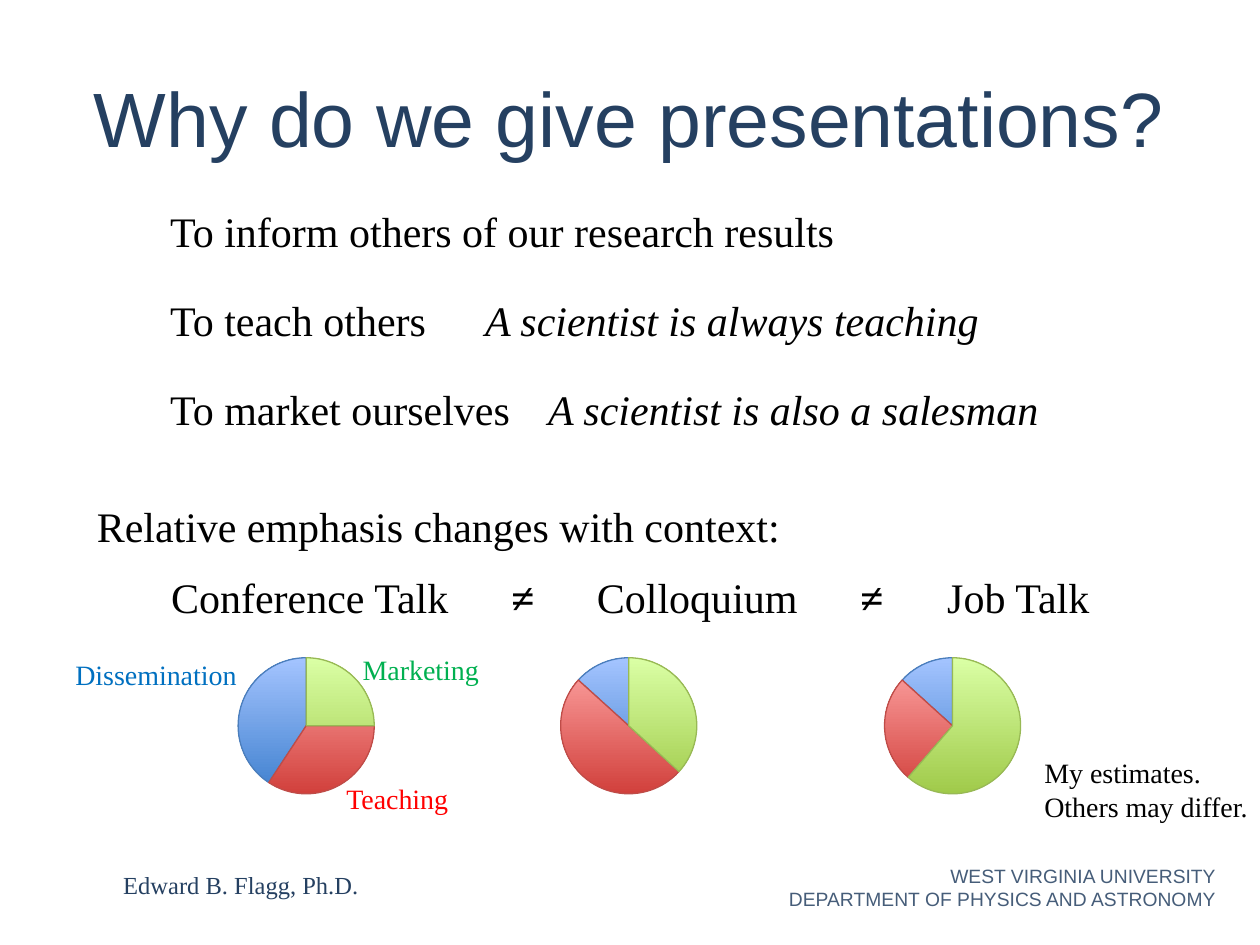
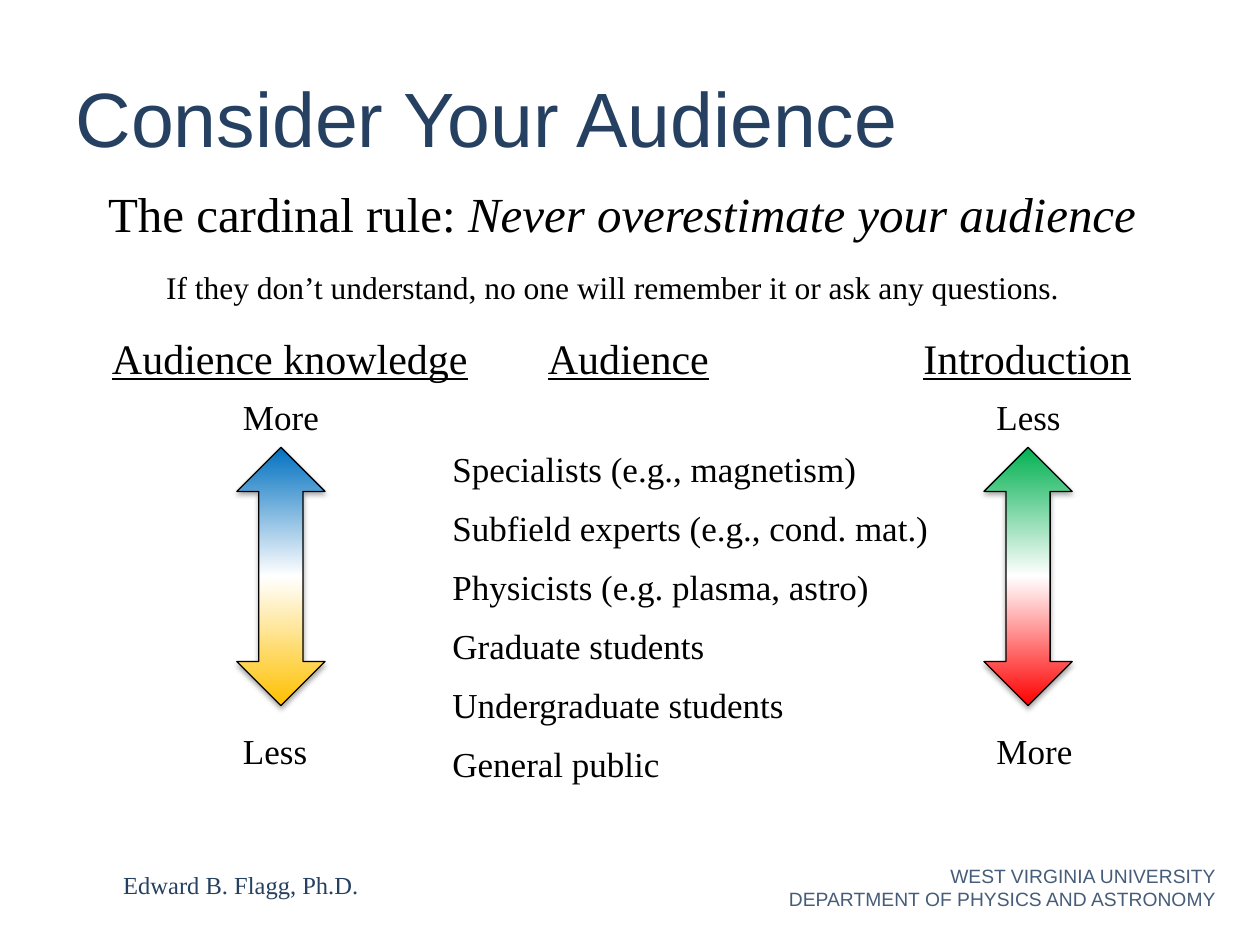
from dataclasses import dataclass

from lxml.etree import SubElement
from pptx import Presentation
from pptx.dml.color import RGBColor
from pptx.enum.shapes import MSO_SHAPE
from pptx.enum.text import MSO_ANCHOR, MSO_AUTO_SIZE, PP_ALIGN
from pptx.oxml.ns import qn
from pptx.util import Inches, Pt

SERIF, SANS = "Times New Roman", "Arial"
NAVY, FOOTER, BLACK = "254061", "465D79", "000000"
PIE_TOP, PIE_SIZE = 5.22, 1.08


@dataclass(frozen=True)
class Run:
    text: str
    italic: bool = False
    bold: bool = False
    underline: bool = False


@dataclass(frozen=True)
class Style:
    size: float
    color: str = BLACK
    font: str = SERIF
    align: PP_ALIGN = PP_ALIGN.LEFT
    gap: float = 0
    tabs: tuple[float, ...] = ()


@dataclass(frozen=True)
class Box:
    left: float
    top: float
    width: float
    height: float

    def lengths(self) -> list:
        return [Inches(v) for v in (self.left, self.top, self.width, self.height)]


@dataclass(frozen=True)
class Slice:
    dark: str
    light: str
    line: str


@dataclass(frozen=True)
class Pie:
    left: float
    marketing_end: float
    teaching_end: float


@dataclass(frozen=True)
class Scale:
    heading: str
    heading_left: float
    heading_width: float
    label_left: float
    arrow_left: float
    top_label: str
    bottom_label: str
    top_color: str
    bottom_color: str


MARKETING = Slice("A0CA4A", "DAFFA5", "98B955")
TEACHING = Slice("D1403C", "FFA6A5", "BF4C48")
DISSEMINATION = Slice("3F80CE", "A4C4FF", "4B7EBC")

PIES = [Pie(1.89, 0, 123.4), Pie(4.45, 42.3, 222.2), Pie(7.02, 130.7, 222.2)]

PIE_LABELS = [
    ("Dissemination", Box(0.5, 5.17, 1.5, 0.37), "0070C0"),
    ("Teaching", Box(2.65, 6.15, 1.02, 0.37), "FF0000"),
    ("Marketing", Box(2.78, 5.13, 1.14, 0.37), "00B050"),
]

SCALES = [
    Scale("Audience knowledge", 0.79, 3.05, 1.83, 1.88, "More", "Less", "0070C0", "FFC000"),
    Scale("Introduction", 7.23, 1.86, 7.81, 7.81, "Less", "More", "00B050", "FF0000"),
]

REASONS = [
    [Run("To inform others of our research results")],
    [Run("To teach others\t"), Run("A scientist is always teaching", italic=True)],
    [Run("To market ourselves\t"), Run("A scientist is also a salesman", italic=True)],
]

AUDIENCES = [
    "Specialists (e.g., magnetism)",
    "Subfield experts (e.g., cond. mat.)",
    "Physicists (e.g. plasma, astro)",
    "Graduate students",
    "Undergraduate students",
    "General public",
]


def rgb(color: str) -> RGBColor:
    return RGBColor.from_string(color)


def add_tabs(p, tabs: tuple[float, ...]) -> None:
    tab_list = SubElement(p._p.get_or_add_pPr(), qn("a:tabLst"))
    for pos in tabs:
        SubElement(tab_list, qn("a:tab"), pos=str(Inches(pos)), algn="l")


def write(tf, lines: list, style: Style, bullets_off: bool = False) -> None:
    for i, line in enumerate(lines):
        p = tf.paragraphs[0] if i == 0 else tf.add_paragraph()
        if bullets_off:
            pPr = p._p.get_or_add_pPr()
            pPr.set("marL", "0")
            pPr.set("indent", "0")
            SubElement(pPr, qn("a:buNone"))
        if style.tabs:
            add_tabs(p, style.tabs)
        p.alignment = style.align
        p.space_before = Pt(style.gap if i else 0)
        for part in [Run(line)] if isinstance(line, str) else line:
            r = p.add_run()
            r.text = part.text
            font = r.font
            font.name, font.size = style.font, Pt(style.size)
            font.color.rgb = rgb(style.color)
            font.italic, font.bold = part.italic, part.bold
            font.underline = part.underline


def add_text(s, box: Box, lines: list, style: Style, wrap: bool = False,
             anchor: MSO_ANCHOR = MSO_ANCHOR.TOP) -> None:
    tf = s.shapes.add_textbox(*box.lengths()).text_frame
    tf.word_wrap = wrap
    tf.vertical_anchor = anchor
    write(tf, lines, style)


def fill_placeholder(sp, box: Box, lines: list, style: Style, anchor: MSO_ANCHOR) -> None:
    sp.left, sp.top, sp.width, sp.height = box.lengths()
    tf = sp.text_frame
    tf.word_wrap = True
    tf.auto_size = MSO_AUTO_SIZE.NONE
    tf.vertical_anchor = anchor
    write(tf, lines, style, bullets_off=True)


def add_base_slide(prs, title: str, title_box: Box, align: PP_ALIGN,
                   body_box: Box, body: list, body_style: Style):
    s = prs.slides.add_slide(prs.slide_layouts[1])
    fill_placeholder(s.shapes.title, title_box, [title],
                     Style(44, NAVY, SANS, align), MSO_ANCHOR.MIDDLE)
    fill_placeholder(s.placeholders[1], body_box, body, body_style, MSO_ANCHOR.TOP)
    add_text(s, Box(5.83, 6.83, 3.92, 0.42),
             ["WEST VIRGINIA UNIVERSITY", "DEPARTMENT OF PHYSICS AND ASTRONOMY"],
             Style(11, FOOTER, SANS, PP_ALIGN.RIGHT), True, MSO_ANCHOR.MIDDLE)
    add_text(s, Box(0.88, 6.86, 4.37, 0.34), ["Edward B. Flagg, Ph.D."],
             Style(14, NAVY), True)
    return s


def add_gradient_shape(s, kind: MSO_SHAPE, box: Box, colors: list[str], line: str):
    sp = s.shapes.add_shape(kind, *box.lengths())
    sp.shadow.inherit = False
    sp.fill.gradient()
    grad = sp._element.spPr.find(qn("a:gradFill"))
    for child in list(grad):
        grad.remove(child)
    stops = SubElement(grad, qn("a:gsLst"))
    for i, color in enumerate(colors):
        stop = SubElement(stops, qn("a:gs"), pos=str(100000 * i // (len(colors) - 1)))
        SubElement(stop, qn("a:srgbClr"), val=color)
    SubElement(grad, qn("a:lin"), ang=str(270 * 60000), scaled="0")
    sp.line.color.rgb = rgb(line)
    sp.line.width = Pt(0.75)
    return sp


def add_shadow(sp) -> None:
    effects = sp._element.spPr.find(qn("a:effectLst"))
    shadow = SubElement(effects, qn("a:outerShdw"), blurRad=str(Pt(3.1)),
                        dist=str(Pt(1.8)), dir=str(90 * 60000), rotWithShape="0")
    color = SubElement(shadow, qn("a:srgbClr"), val=BLACK)
    SubElement(color, qn("a:alpha"), val="35000")


def add_pie(s, pie: Pie) -> None:
    box = Box(pie.left, PIE_TOP, PIE_SIZE, PIE_SIZE)
    for piece, start, end in [
        (DISSEMINATION, pie.teaching_end, 270),
        (TEACHING, pie.marketing_end, pie.teaching_end),
        (MARKETING, 270, pie.marketing_end),
    ]:
        sp = add_gradient_shape(s, MSO_SHAPE.PIE, box, [piece.dark, piece.light], piece.line)
        sp.adjustments[0], sp.adjustments[1] = start * 0.6, end * 0.6


def add_scale(s, scale: Scale) -> None:
    add_heading(s, scale.heading, scale.heading_left, scale.heading_width)
    for label, top in [(scale.top_label, 3.09), (scale.bottom_label, 5.74)]:
        add_text(s, Box(scale.label_left, top, 0.81, 0.44), [label], Style(20))
    sp = add_gradient_shape(s, MSO_SHAPE.UP_DOWN_ARROW, Box(scale.arrow_left, 3.55, 0.7, 2.05),
                            [scale.bottom_color, "FFFFFF", scale.top_color], BLACK)
    add_shadow(sp)


def add_heading(s, text: str, left: float, width: float) -> None:
    add_text(s, Box(left, 2.59, width, 0.5), [[Run(text, underline=True)]], Style(24))


def build_reasons(prs) -> None:
    s = add_base_slide(prs, "Why do we give presentations?", Box(0.25, 0.3, 9.49, 1.25),
                       PP_ALIGN.CENTER, Box(1.25, 1.58, 7.5, 1.9), REASONS,
                       Style(24, gap=22, tabs=(3.01,)))
    add_text(s, Box(0.67, 3.92, 5.67, 0.5), ["Relative emphasis changes with context:"], Style(24))
    unequal = Run("≠", bold=True)
    talks = [Run("Conference Talk\t"), unequal, Run("\tColloquium\t"), unequal, Run("\tJob Talk")]
    add_text(s, Box(1.26, 4.49, 7.6, 0.5), [talks],
             Style(24, tabs=(2.7, 3.38, 5.47, 6.16)), True)
    for pie in PIES:
        add_pie(s, pie)
    for text, box, color in PIE_LABELS:
        add_text(s, box, [text], Style(16, color))
    add_text(s, Box(8.19, 5.95, 1.84, 0.64), ["My estimates.", "Others may differ."], Style(16))


def build_audience(prs) -> None:
    s = add_base_slide(prs, "Consider Your Audience", Box(0.5, 0.3, 9, 1.25),
                       PP_ALIGN.LEFT, Box(3.49, 3.5, 4.2, 2.71), AUDIENCES,
                       Style(20, gap=9.7))
    add_text(s, Box(0.76, 1.41, 8.44, 0.57),
             [[Run("The cardinal rule: "), Run("Never overestimate your audience", italic=True)]],
             Style(28))
    add_text(s, Box(1.22, 2.08, 7.56, 0.4),
             ["If they don’t understand, no one will remember it or ask any questions."],
             Style(18), True)
    add_heading(s, "Audience", 4.25, 1.49)
    for scale in SCALES:
        add_scale(s, scale)


def main() -> None:
    prs = Presentation()
    prs.slide_width, prs.slide_height = Inches(10), Inches(7.5)
    build_reasons(prs)
    build_audience(prs)
    prs.save("out.pptx")


if __name__ == "__main__":
    main()
